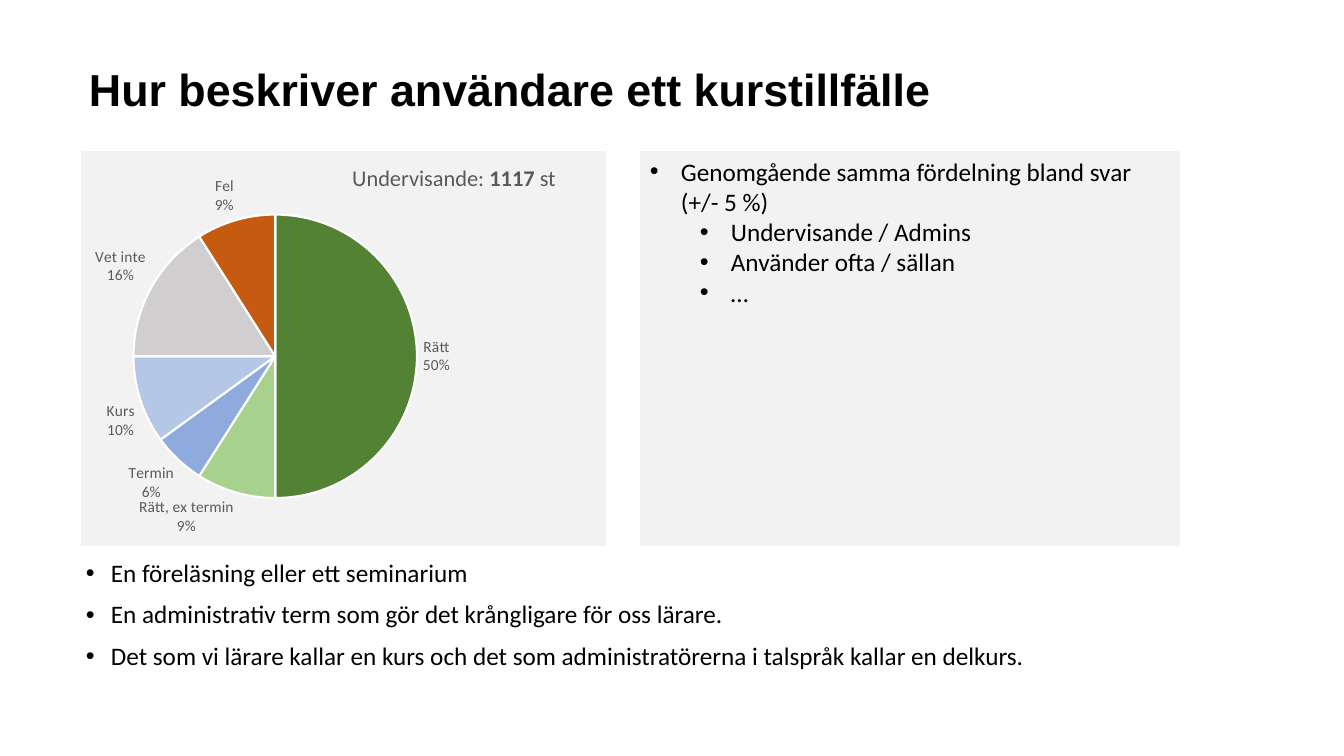
"""Build the slide on how users describe a course instance."""
from pptx import Presentation
from pptx import util as u
from pptx.chart.data import CategoryChartData
from pptx.dml.color import RGBColor
from pptx.enum import chart as charts, shapes, text
from pptx.oxml import parse_xml
from pptx.oxml.ns import nsdecls, qn

TITLE = "Hur beskriver användare ett kurstillfälle"
ANSWERS = [
    ("Rätt", 50, "548235"),
    ("Rätt, ex termin", 9, "A9D18E"),
    ("Termin", 6, "8FAADC"),
    ("Kurs", 10, "B4C7E7"),
    ("Vet inte", 16, "D0CECE"),
    ("Fel", 9, "C55A11"),
]
RESPONDENTS = [("Undervisande: ", False), ("1117 ", True), ("st", False)]
FINDINGS = [
    ("Genomgående samma fördelning bland svar (+/- 5 %)", 0),
    ("Undervisande / Admins", 1),
    ("Använder ofta / sällan", 1),
    ("…", 1),
]
QUOTES = [
    "En föreläsning eller ett seminarium",
    "En administrativ term som gör det krångligare för oss lärare.",
    "Det som vi lärare kallar en kurs och det som administratörerna i talspråk kallar en delkurs.",
]

PX = 914400 / 100.8
SLIDE = (1344, 756)
PANEL_TOP, PANEL_HEIGHT = 151, 395
AREAS = {
    "title": (79, 63, 1119, 81),
    "chart": (81, PANEL_TOP, 525, PANEL_HEIGHT),
    "findings": (640, PANEL_TOP, 540, PANEL_HEIGHT),
    "respondents": (339, 159, 230, 37),
    "quotes": (76, 556, 1113, 131),
}
PLOT = {"x": 0.1, "y": 0.16, "w": 0.54, "h": 0.72}
THEME = {
    "heading": "Arial", "body": "Calibri",
    "ink": "000000", "muted": "595959", "panel": "F2F2F2", "edge": "FFFFFF",
    "title_size": 32, "body_size": 18, "note_size": 16, "label_size": 11,
}


def emu(*lengths):
    return [u.Emu(round(length * PX)) for length in lengths]


def set_font(font, size, face="body", color="ink", bold=False):
    font.name, font.size, font.bold = THEME[face], u.Pt(size), bold
    font.color.rgb = RGBColor.from_string(THEME[color])


def add_text(frame, content, first=True, level=0, indent=0, hanging=0, spacing=None,
             before=0, align=text.PP_ALIGN.LEFT, **font):
    para = frame.paragraphs[0] if first else frame.add_paragraph()
    para.level, para.alignment = level, align
    if spacing:
        para.line_spacing = spacing
    para.space_before = u.Pt(0 if first else before)
    if hanging:
        props = para._p.get_or_add_pPr()
        left, hang = emu(indent, hanging)
        props.set("marL", str(left))
        props.set("indent", str(-hang))
        props.append(parse_xml(f'<a:buFont {nsdecls("a")} typeface="Arial"/>'))
        props.append(parse_xml(f'<a:buChar {nsdecls("a")} char="•"/>'))
    runs = [(content, font.pop("bold", False))] if isinstance(content, str) else content
    for words, bold in runs:
        span = para.add_run()
        span.text = words
        set_font(span.font, bold=bold, **font)


def add_box(page, area, wrap=True):
    box = page.shapes.add_textbox(*emu(*AREAS[area]))
    box.text_frame.word_wrap = wrap
    return box.text_frame


def add_findings(page):
    box = page.shapes.add_shape(shapes.MSO_SHAPE.RECTANGLE, *emu(*AREAS["findings"]))
    box.shadow.inherit = False
    box.fill.solid()
    box.fill.fore_color.rgb = RGBColor.from_string(THEME["panel"])
    box.line.fill.background()
    frame = box.text_frame
    frame.word_wrap = True
    frame.vertical_anchor = text.MSO_ANCHOR.TOP
    for index, (words, level) in enumerate(FINDINGS):
        add_text(frame, words, first=index == 0, level=level, indent=31 + 50 * level,
                 hanging=31, size=THEME["body_size"])


def add_pie(page):
    data = CategoryChartData()
    data.categories = [name for name, _, _ in ANSWERS]
    data.add_series("Series 1", [value for _, value, _ in ANSWERS])
    chart = page.shapes.add_chart(charts.XL_CHART_TYPE.PIE, *emu(*AREAS["chart"]), data).chart
    chart.has_title = chart.has_legend = False
    set_font(chart.font, THEME["label_size"])
    plot = chart.plots[0]
    plot.vary_by_categories = True
    for index, (_, _, color) in enumerate(ANSWERS):
        look = plot.series[0].points[index].format
        look.fill.solid()
        look.fill.fore_color.rgb = RGBColor.from_string(color)
        look.line.color.rgb = RGBColor.from_string(THEME["edge"])
        look.line.width = u.Pt(1.5)
    labels = plot.series[0].data_labels
    set_font(labels.font, THEME["label_size"], color="muted")
    labels.show_category_name = labels.show_percentage = True
    labels.show_value = False
    labels.position = charts.XL_LABEL_POSITION.OUTSIDE_END
    place_plot(chart)


def place_plot(chart):
    body = chart.element.find(qn("c:chart"))
    area = body.find(qn("c:plotArea"))
    for layout in area.findall(qn("c:layout")):
        area.remove(layout)
    modes = "".join(f'<c:{axis}Mode val="edge"/>' for axis in "xy")
    sizes = "".join(f'<c:{key} val="{value}"/>' for key, value in PLOT.items())
    area.insert(0, parse_xml(
        f'<c:layout {nsdecls("c")}><c:manualLayout><c:layoutTarget val="inner"/>'
        f'{modes}{sizes}</c:manualLayout></c:layout>'))
    body.addnext(parse_xml(
        f'<c:spPr {nsdecls("c", "a")}><a:solidFill><a:srgbClr val="{THEME["panel"]}"/>'
        '</a:solidFill><a:ln><a:noFill/></a:ln></c:spPr>'))


def main():
    deck = Presentation()
    deck.slide_width, deck.slide_height = emu(*SLIDE)
    page = deck.slides.add_slide(deck.slide_layouts[6])
    add_text(add_box(page, "title"), TITLE, spacing=0.9, size=THEME["title_size"],
             face="heading", bold=True)
    add_findings(page)
    add_pie(page)
    add_text(add_box(page, "respondents", wrap=False), RESPONDENTS,
             align=text.PP_ALIGN.CENTER, size=THEME["note_size"], color="muted")
    quotes = add_box(page, "quotes")
    for index, words in enumerate(QUOTES):
        add_text(quotes, words, first=index == 0, indent=25, hanging=25, spacing=0.9,
                 before=10, size=THEME["body_size"])
    deck.save("out.pptx")


if __name__ == "__main__":
    main()
